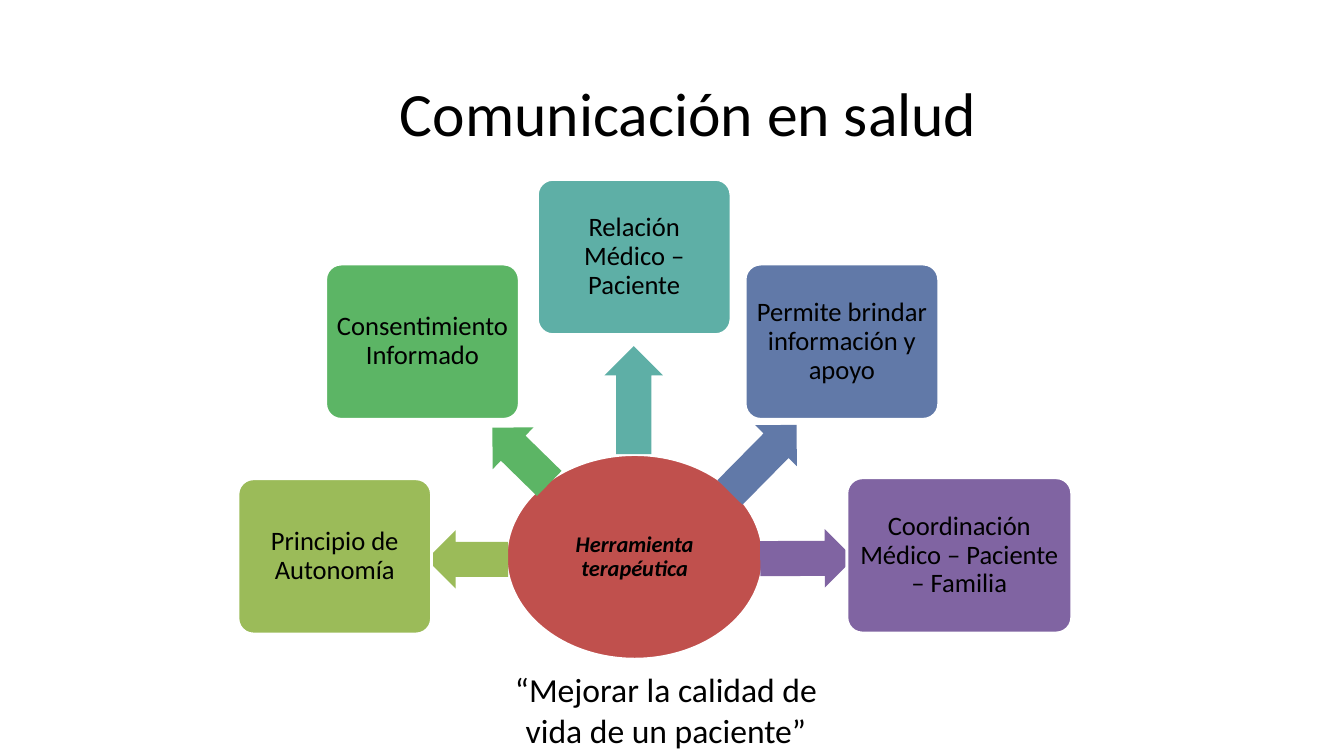
from pptx import Presentation
from pptx import util as u
from pptx.dml.color import RGBColor
from pptx.enum import shapes, text

PX = 9144  # 100 px to the inch
FONT = "Calibri"
BLACK = RGBColor(0x00, 0x00, 0x00)
WHITE = RGBColor(0xFF, 0xFF, 0xFF)
RED = RGBColor(0xC0, 0x50, 0x4D)
LIME = RGBColor(0x9B, 0xBB, 0x59)
GREEN = RGBColor(0x5C, 0xB5, 0x65)
TEAL = RGBColor(0x5E, 0xAF, 0xA6)
BLUE = RGBColor(0x61, 0x79, 0xA8)
PURPLE = RGBColor(0x80, 0x64, 0xA2)

CARD_W, CARD_H = 192, 154
ARROW_H = 58
# words, colour, card (left, top, width), arrow (left, top, length, turn)
CARDS = [
    ("Principio de Autonomía", LIME, (0, 297, CARD_W), (187, 348, 81, 0)),
    ("Consentimiento Informado", GREEN, (87, 84, CARD_W), (241, 245, 79, 44.4)),
    ("Relación Médico – Paciente", TEAL, (297, 0, CARD_W), (339, 190, 107, 90)),
    ("Permite brindar información y apoyo", BLUE, (503, 84, CARD_W), (474, 248, 94, 134.6)),
    ("Coordinación Médico – Paciente – Familia", PURPLE, (604, 296, 223), (518, 347, 93, 179.8)),
]


def px(*nums):
    return [u.Emu(n * PX) for n in nums]


def write(shape, words, size, bold=False, inset=None, anchor=text.MSO_ANCHOR.MIDDLE, space=1.0):
    frame = shape.text_frame
    frame.word_wrap = True
    frame.vertical_anchor = anchor
    if inset is not None:
        gap = u.Emu(inset * PX)
        frame.margin_left = frame.margin_right = gap
        frame.margin_top = frame.margin_bottom = gap
    para = frame.paragraphs[0]
    para.alignment = text.PP_ALIGN.CENTER
    para.line_spacing = space
    run = para.add_run()
    run.text = words
    font = run.font
    font.name, font.size = FONT, u.Pt(size)
    font.bold = font.italic = bold
    font.color.rgb = BLACK


def draw(slide, kind, box, fill, edge=True):
    shape = slide.shapes.add_shape(kind, *px(*box))
    shape.shadow.inherit = False
    shape.fill.solid()
    shape.fill.fore_color.rgb = fill
    if edge:
        shape.line.color.rgb = WHITE
        shape.line.width = u.Pt(2)
    else:
        shape.line.fill.background()
    return shape


def label(slide, box, words, size, anchor):
    write(slide.shapes.add_textbox(*px(*box)), words, size, anchor=anchor)


def wheel(slide, left, top):
    # Centre
    hub = draw(slide, shapes.MSO_SHAPE.OVAL, (left + 266, top + 273, 255, 203), RED)
    write(hub, "Herramienta terapéutica", 16, bold=True, inset=1, space=0.9)

    # Arrows and cards around it
    for words, fill, (x, y, width), (ax, ay, length, turn) in CARDS:
        arrow = draw(slide, shapes.MSO_SHAPE.LEFT_ARROW,
                     (left + ax, top + ay, length, ARROW_H), fill, edge=False)
        arrow.adjustments[0] = 0.6
        arrow.adjustments[1] = 0.5
        arrow.rotation = turn
        card = draw(slide, shapes.MSO_SHAPE.ROUNDED_RECTANGLE,
                    (left + x, top + y, width, CARD_H), fill)
        card.adjustments[0] = 0.1
        write(card, words, 19, inset=4, space=0.9)


def main():
    deck = Presentation()
    deck.slide_width, deck.slide_height = px(1333, 750)
    slide = deck.slides.add_slide(deck.slide_layouts[6])
    # Title
    label(slide, (158, 40, 1050, 143), "Comunicación en salud", 44, text.MSO_ANCHOR.MIDDLE)
    # Diagram
    wheel(slide, 236, 178)
    # Closing quote
    label(slide, (492, 659, 337, 91), "“Mejorar la calidad de vida de un paciente”", 24,
          text.MSO_ANCHOR.TOP)
    deck.save("out.pptx")


if __name__ == "__main__":
    main()
